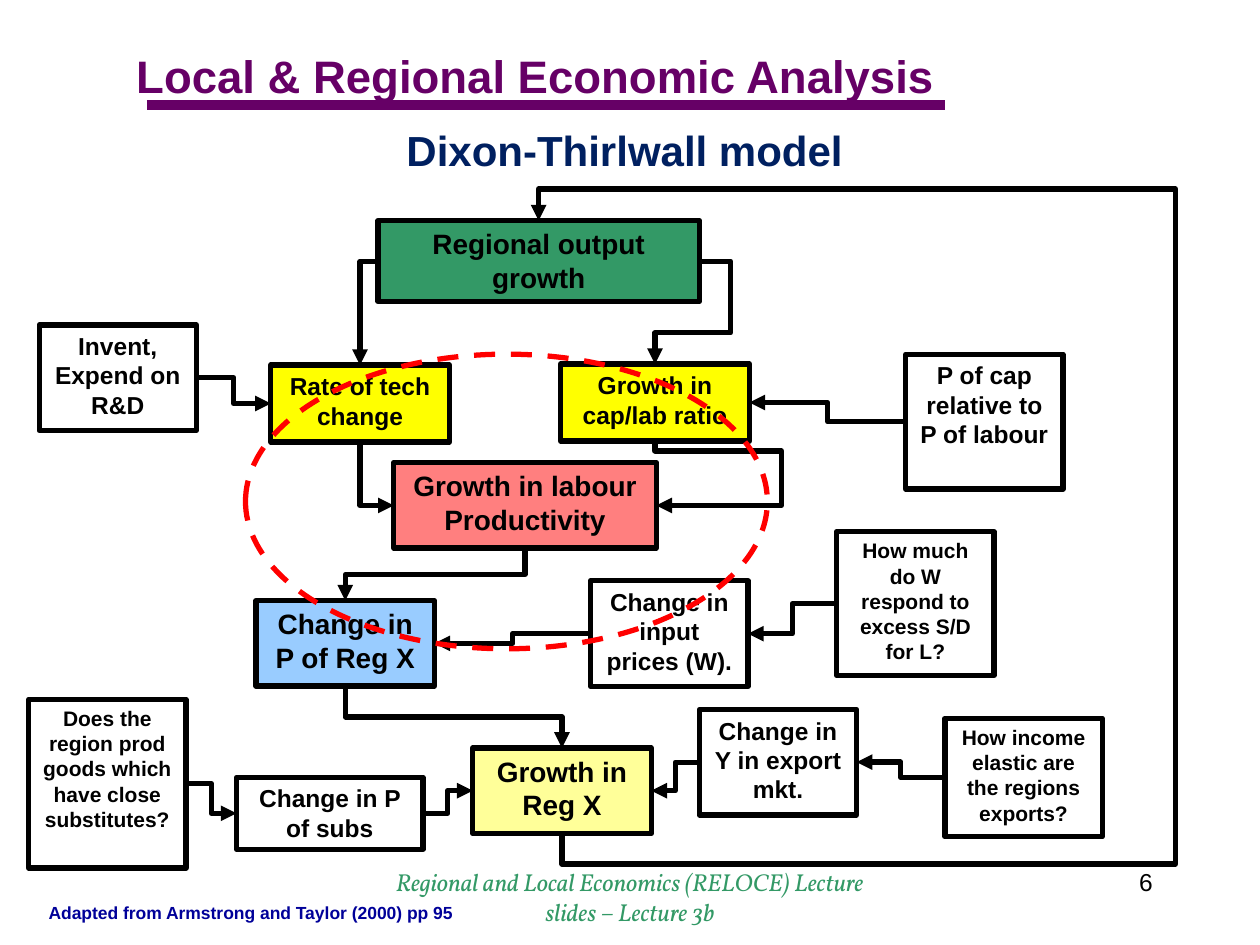
"""Build the Dixon-Thirlwall model slide as a flow chart of glued boxes."""
from lxml import etree
from pptx import Presentation
from pptx import util as u
from pptx.dml.color import RGBColor
from pptx.enum import dml, shapes, text
from pptx.oxml.ns import qn

COLORS = {
    "black": "000000", "white": "FFFFFF", "purple": "660066", "navy": "002060",
    "green": "339966", "red": "FF0000", "yellow": "FFFF00", "cream": "FFFF99",
    "sky": "99CCFF", "blue": "000099",
}
TOP, LEFT, BOTTOM, RIGHT = range(4)
ALIGN = text.PP_ALIGN


class Deck:
    """Hold the style and the current slide."""

    def __init__(self, prs, font="Arial", line_width=3):
        self.s = prs.slides.add_slide(prs.slide_layouts[5])
        self.font, self.line_width = font, line_width

    def color(self, name):
        return RGBColor.from_string(COLORS[name])

    def set_text(self, sp, words, size, color="black", align=ALIGN.CENTER,
                 bold=True, italic=False, font=None):
        tf = sp.text_frame
        tf.word_wrap = True
        tf.auto_size = text.MSO_AUTO_SIZE.NONE
        tf.vertical_anchor = text.MSO_ANCHOR.TOP
        p = tf.paragraphs[0]
        p.text, p.alignment = words, align
        f = p.font
        f.name, f.size, f.bold, f.italic = font or self.font, u.Pt(size), bold, italic
        f.color.rgb = self.color(color)

    def title(self, words, box, size, color):
        sp = self.s.shapes.title
        sp.left, sp.top, sp.width, sp.height = map(u.Cm, box)
        self.set_text(sp, words, size, color, ALIGN.LEFT)

    def label(self, words, box, size, **style):
        self.set_text(self.s.shapes.add_textbox(*map(u.Cm, box)), words, size, **style)

    def outline(self, sp, color="black", width=None):
        sp.line.color.rgb = self.color(color)
        sp.line.width = u.Pt(width or self.line_width)

    def box(self, words, box, size=14, fill="white", alpha=None):
        sp = self.s.shapes.add_shape(shapes.MSO_SHAPE.RECTANGLE, *map(u.Cm, box))
        sp.shadow.inherit = False
        sp.fill.solid()
        sp.fill.fore_color.rgb = self.color(fill)
        if alpha:
            clr = sp.element.spPr.find(qn("a:solidFill"))[0]
            etree.SubElement(clr, qn("a:alpha"), val=str(alpha * 1000))
        self.outline(sp)
        self.set_text(sp, words, size)
        return sp

    def ring(self, box, color):
        sp = self.s.shapes.add_shape(shapes.MSO_SHAPE.OVAL, *map(u.Cm, box))
        sp.shadow.inherit = False
        sp.fill.background()
        self.outline(sp, color)
        sp.line.dash_style = dml.MSO_LINE.DASH

    def rule(self, x1, x2, y, color, width):
        c = self.s.shapes.add_connector(
            shapes.MSO_CONNECTOR.STRAIGHT, *map(u.Cm, (x1, y, x2, y)))
        self.outline(c, color, width)
        etree.SubElement(c.element.spPr, qn("a:effectLst"))

    def link(self, start, start_side, end, end_side, via=None):
        """Join two box sides by a bent arrow; via lists its turns in cm, or None for halfway."""
        c = self.s.shapes.add_connector(shapes.MSO_CONNECTOR.ELBOW, 0, 0, 0, 0)
        c.begin_connect(start, start_side)
        c.end_connect(end, end_side)
        x, y = c.begin_x, c.begin_y
        dx, dy = c.end_x - x, c.end_y - y
        spPr = c.element.spPr
        vertical = start_side in (TOP, BOTTOM)
        if vertical:
            c.left, c.top = x + (dx - abs(dy)) // 2, y + (dy - abs(dx)) // 2
            c.width, c.height = abs(dy), abs(dx)
            xfrm = spPr.find(qn("a:xfrm"))
            xfrm.attrib.clear()
            xfrm.set("rot", str((270 if dx > 0 else 90) * 60000))
            if (dx > 0) != (dy < 0):
                xfrm.set("flipH", "1")
        axes = [(y, dy), (x, dx)] if vertical else [(x, dx), (y, dy)]
        if via is None:
            turns = [0.5]
        else:
            turns = [(u.Cm(v) - axes[i % 2][0]) / axes[i % 2][1]
                     for i, v in enumerate(via)]
        geom = spPr.find(qn("a:prstGeom"))
        geom.set("prst", f"bentConnector{len(turns) + 2}")
        guides = geom.find(qn("a:avLst"))
        for i, turn in enumerate(turns, 1):
            etree.SubElement(guides, qn("a:gd"), name=f"adj{i}",
                             fmla=f"val {round(turn * 100000)}")
        self.outline(c)
        etree.SubElement(spPr.find(qn("a:ln")), qn("a:tailEnd"), type="triangle")
        etree.SubElement(spPr, qn("a:effectLst"))


def main():
    prs = Presentation()
    prs.slide_width, prs.slide_height = u.Cm(25.4), u.Cm(19.05)
    d = Deck(prs)

    d.label("Local & Regional Economic Analysis", (2.33, 0.85, 16.93, 1.35), 26,
            color="purple")
    d.rule(2.96, 19.05, 2.12, "purple", 6)
    d.title("Dixon-Thirlwall model", (7.94, 2.38, 9.95, 1.29), 24, "navy")
    d.label("Regional and Local Economics (RELOCE) Lecture slides – Lecture 3b",
            (7.41, 17.36, 10.58, 1.27), 14, color="green", bold=False,
            italic=True, font="Vollkorn")
    d.label("6", (18.2, 17.36, 5.29, 1.27), 14, align=ALIGN.RIGHT, bold=False)

    productivity = d.box("Growth in labour Productivity",
                         (7.94, 9.33, 5.29, 1.72), 16, "red", alpha=50)
    ratio = d.box("Growth in cap/lab ratio", (11.3, 7.34, 3.81, 1.55), fill="yellow")
    tech = d.box("Rate of tech change", (5.46, 7.36, 3.6, 1.55), fill="yellow")
    capital = d.box("P of cap relative to P of labour", (18.26, 7.14, 3.17, 2.72))
    research = d.box("Invent, Expend on R&D", (0.79, 6.55, 3.17, 2.13))
    output = d.box("Regional output growth", (7.62, 4.45, 6.48, 1.63), 16, "green")
    exports = d.box("Growth in Reg X", (9.53, 15.08, 3.6, 1.72), 16, "cream")
    subs = d.box("Change in P of subs", (4.77, 15.67, 3.76, 1.45))
    market = d.box("Change in Y in export mkt.", (14.1, 14.3, 3.17, 2.13))
    income = d.box("How income elastic are the regions exports?",
                   (19.05, 14.48, 3.17, 2.39), 12)
    rivals = d.box("Does the region prod goods which have close substitutes?",
                   (0.58, 14.1, 3.17, 3.4), 12)
    price = d.box("Change in P of Reg X", (5.16, 12.11, 3.6, 1.72), 16, "sky")
    inputs = d.box("Change in input prices (W).", (11.91, 11.71, 3.17, 2.13))
    wages = d.box("How much do W respond to excess S/D for L?",
                  (16.87, 10.72, 3.17, 2.9), 12)

    for start, end in ((research, tech), (rivals, subs), (subs, exports)):
        d.link(start, RIGHT, end, LEFT)
    for start, end in ((capital, ratio), (wages, inputs), (inputs, price),
                       (income, market), (market, exports)):
        d.link(start, LEFT, end, RIGHT)
    for start, end in ((productivity, price), (price, exports)):
        d.link(start, BOTTOM, end, TOP)
    d.link(output, LEFT, tech, TOP, ())
    d.link(tech, BOTTOM, productivity, LEFT, ())
    d.link(output, RIGHT, ratio, TOP, (14.73, 6.71))
    d.link(ratio, BOTTOM, productivity, RIGHT, (9.09, 15.75))
    d.link(exports, BOTTOM, output, TOP, (17.42, 23.7, 3.81))

    d.ring((4.95, 7.14, 10.52, 5.94), "red")
    d.label("Adapted from Armstrong and Taylor (2000) pp 95",
            (0.58, 18.06, 8.94, 0.69), 10, color="blue")
    prs.save("out.pptx")


if __name__ == "__main__":
    main()
